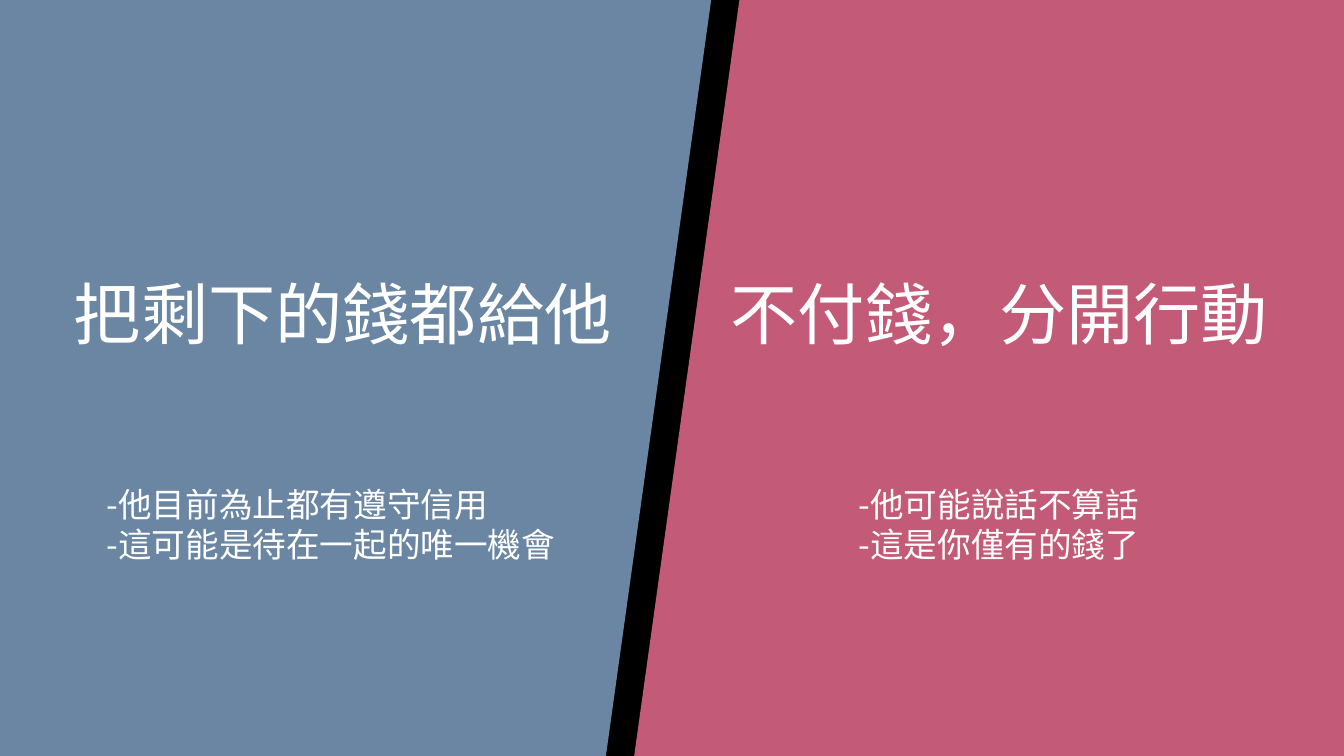
import dataclasses

import pptx
import pptx.dml.color
import pptx.enum.text
import pptx.util

Pt = pptx.util.Pt
RGB = pptx.dml.color.RGBColor
ALIGN = pptx.enum.text.PP_ALIGN


@dataclasses.dataclass(frozen=True)
class Theme:
    background: RGB = RGB(0x00, 0x00, 0x00)
    blue: RGB = RGB(0x6B, 0x86, 0xA3)
    pink: RGB = RGB(0xC3, 0x5A, 0x78)
    text: RGB = RGB(0xFF, 0xFF, 0xFF)
    heading_font: str = "Calibri"
    reason_font: str = "Noto Sans CJK JP"
    heading_size: int = 48
    reason_size: int = 24
    reason_line: float = 28.8


THEME = Theme()
WIDTH, HEIGHT = 960, 540
TEXT_HEIGHT = 65.5
HEADING_TOP, REASONS_TOP = 190.8, 342


def add_panel(s, corners, color):
    points = [(Pt(x), Pt(y)) for x, y in corners]
    builder = s.shapes.build_freeform(*points[0])
    builder.add_line_segments(points[1:], close=True)
    sp = builder.convert_to_shape()
    sp.shadow.inherit = False
    sp.fill.solid()
    sp.fill.fore_color.rgb = color
    sp.line.fill.background()


def add_text(s, left, top, width, lines, font, size, align, line_spacing=None):
    box = s.shapes.add_textbox(Pt(left), Pt(top), Pt(width), Pt(TEXT_HEIGHT))
    tf = box.text_frame
    tf.word_wrap = True
    tf.text = "\n".join(lines)
    for p in tf.paragraphs:
        p.alignment = align
        if line_spacing:
            p.line_spacing = Pt(line_spacing)
        p.font.name = font
        p.font.size = Pt(size)
        p.font.color.rgb = THEME.text


def add_heading(s, left, width, text):
    add_text(s, left, HEADING_TOP, width, [text],
             THEME.heading_font, THEME.heading_size, ALIGN.CENTER)


def add_reasons(s, left, width, reasons):
    add_text(s, left, REASONS_TOP, width, reasons, THEME.reason_font,
             THEME.reason_size, ALIGN.LEFT, THEME.reason_line)


def main():
    prs = pptx.Presentation()
    prs.slide_width, prs.slide_height = Pt(WIDTH), Pt(HEIGHT)
    s = prs.slides.add_slide(prs.slide_layouts[6])
    s.background.fill.solid()
    s.background.fill.fore_color.rgb = THEME.background

    add_panel(s, [(0, 0), (508, 0), (432.8, HEIGHT), (0, HEIGHT)], THEME.blue)
    add_panel(s, [(528.2, 0), (WIDTH, 0), (WIDTH, HEIGHT), (453, HEIGHT)],
              THEME.pink)

    add_heading(s, 40.3, 409, "把剩下的錢都給他")
    add_heading(s, 492.5, 442.8, "不付錢，分開行動")
    add_reasons(s, 69.1, 357.8,
                ["-他目前為止都有遵守信用", "-這可能是待在一起的唯一機會"])
    add_reasons(s, 606.2, 299.5,
                ["-他可能說話不算話", "-這是你僅有的錢了"])

    prs.save("out.pptx")


if __name__ == "__main__":
    main()
